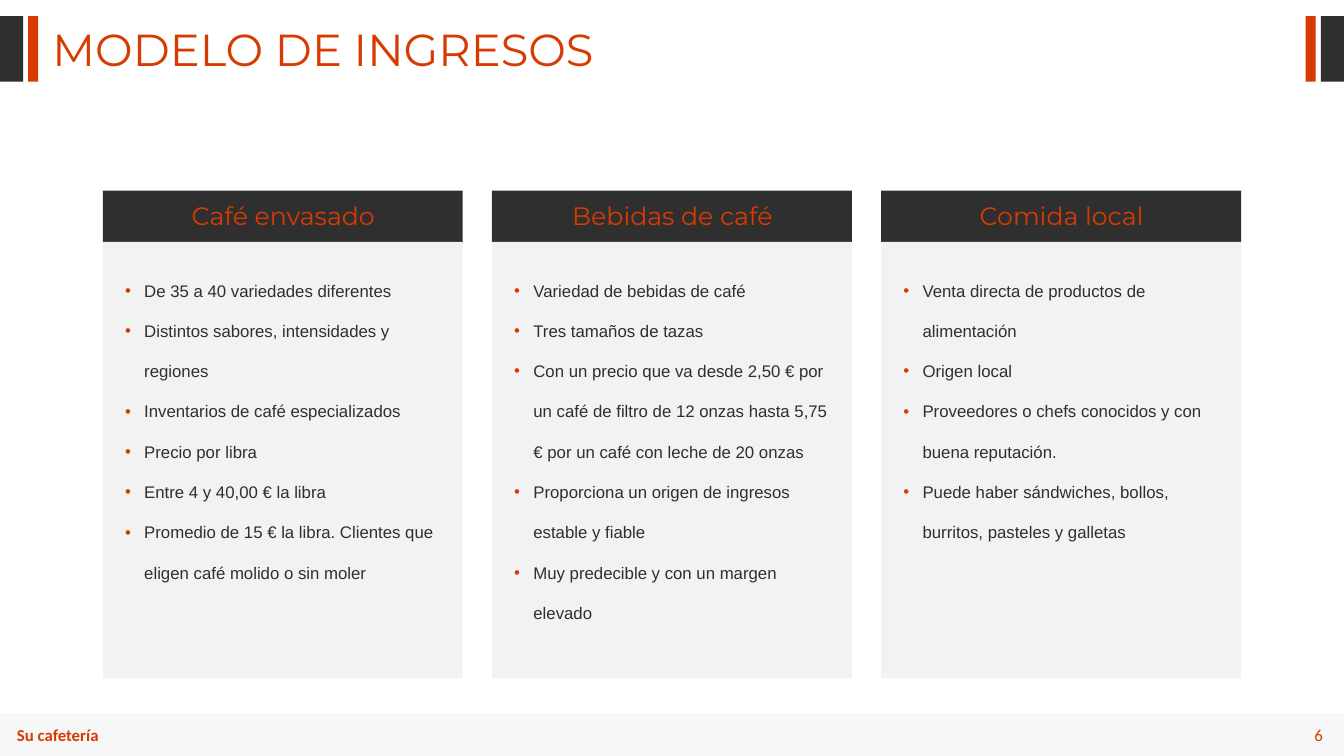
from lxml import etree
from pptx import Presentation
from pptx.dml.color import RGBColor
from pptx.enum.shapes import MSO_SHAPE
from pptx.enum.text import MSO_ANCHOR, MSO_AUTO_SIZE, PP_ALIGN
from pptx.oxml.ns import qn
from pptx.util import Inches, Pt

RECTANGLE = MSO_SHAPE.RECTANGLE
LEFT, CENTER, RIGHT = PP_ALIGN.LEFT, PP_ALIGN.CENTER, PP_ALIGN.RIGHT
TOP, MIDDLE = MSO_ANCHOR.TOP, MSO_ANCHOR.MIDDLE
NO_AUTOFIT = MSO_AUTO_SIZE.NONE

COLORS = {"dark": "2F2F2F", "accent": "D83B01", "panel": "F2F2F2", "footer": "E6E6E6"}
COMPARISON_LAYOUT = 4
SLIDE_WIDTH, SLIDE_HEIGHT = 13.33, 7.5
COLUMN_LEFT, COLUMN_PITCH, COLUMN_WIDTH = 1.02, 3.86, 3.57
TEXT_INSET, TEXT_WIDTH = 0.12, 3.34
BULLET_INDENT = 0.19

INCOME_SOURCES = [
    ("Café envasado", 3.33, [
        "De 35 a 40 variedades diferentes",
        "Distintos sabores, intensidades y regiones",
        "Inventarios de café especializados",
        "Precio por libra",
        "Entre 4 y 40,00 € la libra",
        "Promedio de 15 € la libra. Clientes que eligen café molido o sin moler",
    ]),
    ("Bebidas de café", 4.08, [
        "Variedad de bebidas de café",
        "Tres tamaños de tazas",
        "Con un precio que va desde 2,50 € por un café de filtro de 12 onzas "
        "hasta 5,75 € por un café con leche de 20 onzas",
        "Proporciona un origen de ingresos estable y fiable",
        "Muy predecible y con un margen elevado",
    ]),
    ("Comida local", 2.87, [
        "Venta directa de productos de alimentación",
        "Origen local",
        "Proveedores o chefs conocidos y con buena reputación.",
        "Puede haber sándwiches, bollos, burritos, pasteles y galletas",
    ]),
]


def add_block(page, left, top, width, height, color, opacity=None):
    """Add a plain rectangle, optionally see-through (opacity in percent)."""
    block = page.shapes.add_shape(
        RECTANGLE, Inches(left), Inches(top), Inches(width), Inches(height))
    block.shadow.inherit = False
    block.line.fill.background()
    block.fill.solid()
    block.fill.fore_color.rgb = RGBColor.from_string(COLORS[color])
    if opacity is not None:
        tint = block.fill._xPr.find(qn("a:solidFill"))[0]
        etree.SubElement(tint, qn("a:alpha"), val=str(opacity * 1000))


def style_paragraph(para, font, size, color, align=LEFT, bold=False):
    """Set the alignment and font of a paragraph."""
    para.alignment = align
    para.font.name = font
    para.font.size = Pt(size)
    para.font.bold = bold
    para.font.color.rgb = RGBColor.from_string(COLORS[color])


def place(box, left, top, width, height, anchor=TOP):
    """Move a text shape and fix its frame behaviour."""
    box.left, box.top = Inches(left), Inches(top)
    box.width, box.height = Inches(width), Inches(height)
    frame = box.text_frame
    frame.word_wrap = True
    frame.auto_size = NO_AUTOFIT
    frame.vertical_anchor = anchor


def add_label(page, text, area, font, size, align=LEFT, anchor=TOP, bold=False):
    """Add a one-line text box in the accent colour."""
    box = page.shapes.add_textbox(0, 0, 0, 0)
    place(box, *area, anchor=anchor)
    para = box.text_frame.paragraphs[0]
    para.text = text
    style_paragraph(para, font, size, "accent", align, bold)


def add_bullet(para):
    """Give a paragraph an accent-coloured bullet with a hanging indent."""
    props = para._p.get_or_add_pPr()
    props.set("marL", str(Inches(BULLET_INDENT)))
    props.set("indent", str(-Inches(BULLET_INDENT)))
    tint = etree.SubElement(props, qn("a:buClr"))
    etree.SubElement(tint, qn("a:srgbClr"), val=COLORS["accent"])
    etree.SubElement(props, qn("a:buFont"), typeface="Arial")
    etree.SubElement(props, qn("a:buChar"), char="•")


def fill_list(body, items):
    """Write the items of a list into a body placeholder."""
    frame = body.text_frame
    frame.text = "\n".join(items)
    for para in frame.paragraphs:
        add_bullet(para)
        para.line_spacing = 2.0
        para.space_before = Pt(0)
        style_paragraph(para, "Arial", 12, "dark")


def add_column(page, body, left, heading, text_height, items):
    """Build one income column: heading band, panel and list."""
    text_left = left + TEXT_INSET
    add_block(page, left, 1.89, COLUMN_WIDTH, 0.52, "dark")
    add_label(page, heading, (text_left, 1.94, TEXT_WIDTH, 0.4), "Montserrat", 18, CENTER)
    add_block(page, left, 2.4, COLUMN_WIDTH, 4.33, "panel")
    page.shapes._spTree.append(body._element)
    place(body, text_left, 2.53, TEXT_WIDTH, text_height)
    fill_list(body, items)


def add_title(page, text):
    """Write the slide title and the mirrored stripes at both edges."""
    title = page.shapes.title
    place(title, 0.42, 0.27, 6.67, 0.54)
    para = title.text_frame.paragraphs[0]
    para.text = text
    para.line_spacing = 0.8
    style_paragraph(para, "Montserrat", 32, "accent")
    for left, width, color in ((0, 0.23, "dark"), (0.28, 0.1, "accent")):
        for edge in (left, SLIDE_WIDTH - left - width):
            add_block(page, edge, 0.16, width, 0.65, color)


def add_footer(page, name, number):
    """Add the footer band with the business name and page number."""
    add_block(page, 0, 7.08, SLIDE_WIDTH, 0.42, "footer", opacity=30)
    add_label(page, name, (0.07, 7.14, 1.84, 0.3), "Calibri", 12, bold=True)
    add_label(page, number, (12.35, 7.14, 0.87, 0.3), "Calibri", 12, RIGHT, MIDDLE)


def main():
    """Build the revenue model slide and save it."""
    deck = Presentation()
    deck.slide_width, deck.slide_height = Inches(SLIDE_WIDTH), Inches(SLIDE_HEIGHT)
    page = deck.slides.add_slide(deck.slide_layouts[COMPARISON_LAYOUT])
    _, *bodies, spare = page.placeholders
    spare._element.getparent().remove(spare._element)
    add_footer(page, "Su cafetería", "6")
    add_title(page, "MODELO DE INGRESOS")
    for index, (body, source) in enumerate(zip(bodies, INCOME_SOURCES)):
        add_column(page, body, COLUMN_LEFT + index * COLUMN_PITCH, *source)
    deck.save("out.pptx")


if __name__ == "__main__":
    main()
